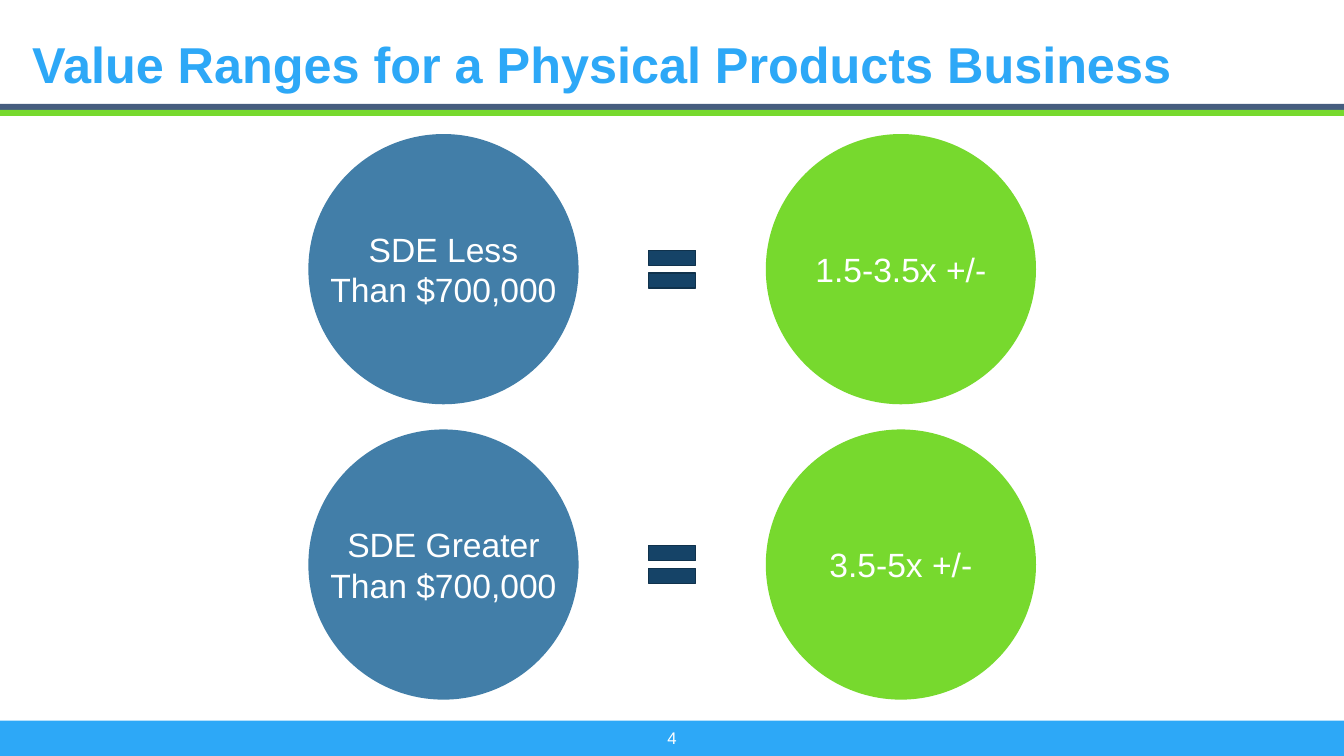
"""Build the slide on value ranges for a physical products business."""
import dataclasses
import typing

import pptx
import pptx.dml.color
import pptx.enum.shapes
import pptx.enum.text
import pptx.shapes.autoshape
import pptx.slide
import pptx.util

Pt = pptx.util.Pt
Kind = pptx.enum.shapes.MSO_SHAPE
Align = pptx.enum.text.PP_ALIGN
Anchor = pptx.enum.text.MSO_ANCHOR


@dataclasses.dataclass(frozen=True)
class Theme:
    font: str = "Arial"
    white: str = "FFFFFF"
    sky: str = "2DA8F7"
    slate: str = "465D7F"
    green: str = "77D92E"
    steel: str = "427EA8"
    navy: str = "154367"
    edge: str = "10324C"
    title: float = 36
    label: float = 24
    number: float = 12


@dataclasses.dataclass(frozen=True)
class Box:
    left: float
    top: float
    width: float
    height: float


@dataclasses.dataclass(frozen=True)
class Band:
    top: float
    height: float
    fill: str


@dataclasses.dataclass(frozen=True)
class Range:
    earnings: tuple[str, ...]
    value: tuple[str, ...]


THEME = Theme()
WIDTH, HEIGHT = 960, 540
DISC, SIGN = 193, 46
LEFT, RIGHT = 220.25, 547
TOP, STEP = 95.75, 211
BANDS = (
    Band(514.8, 25.2, THEME.sky),
    Band(74.2, 4.3, THEME.slate),
    Band(78.5, 4.3, THEME.green),
)
RANGES = (
    Range(("SDE Less", "Than $700,000"), ("1.5-3.5x +/-",)),
    Range(("SDE Greater", "Than $700,000"), ("3.5-5x +/-",)),
)


def tint(code: str) -> pptx.dml.color.RGBColor:
    return pptx.dml.color.RGBColor.from_string(code)


def place(shape: typing.Any, box: Box) -> None:
    shape.left, shape.top = Pt(box.left), Pt(box.top)
    shape.width, shape.height = Pt(box.width), Pt(box.height)


def write(shape: typing.Any, lines: tuple[str, ...], size: float, color: str,
          align: Align = Align.CENTER, anchor: Anchor = Anchor.MIDDLE,
          bold: bool = False, wrap: bool = False) -> None:
    frame = shape.text_frame
    frame.margin_left = frame.margin_right = Pt(0)
    frame.margin_top = frame.margin_bottom = Pt(0)
    frame.auto_size = pptx.enum.text.MSO_AUTO_SIZE.NONE
    frame.word_wrap = wrap
    frame.vertical_anchor = anchor
    para = frame.paragraphs[0]
    para.alignment = align
    for index, line in enumerate(lines):
        if index:
            para.add_line_break()
        run = para.add_run()
        run.text = line
        run.font.name = THEME.font
        run.font.size = Pt(size)
        run.font.bold = bold
        run.font.color.rgb = tint(color)


def draw(slide: pptx.slide.Slide, kind: Kind, box: Box, fill: str,
         edge: str | None = None) -> pptx.shapes.autoshape.Shape:
    shape = slide.shapes.add_shape(kind, Pt(0), Pt(0), Pt(1), Pt(1))
    place(shape, box)
    shape.shadow.inherit = False
    shape.fill.solid()
    shape.fill.fore_color.rgb = tint(fill)
    if edge:
        shape.line.color.rgb = tint(edge)
        shape.line.width = Pt(1)
    else:
        shape.line.fill.background()
    return shape


def draw_range(slide: pptx.slide.Slide, item: Range, top: float) -> None:
    discs = ((LEFT, THEME.steel, item.earnings), (RIGHT, THEME.green, item.value))
    for left, fill, lines in discs:
        disc = draw(slide, Kind.OVAL, Box(left, top, DISC, DISC), fill)
        write(disc, lines, THEME.label, THEME.white)
    sign = Box((WIDTH - SIGN) / 2, top + (DISC - SIGN) / 2, SIGN, SIGN)
    draw(slide, Kind.MATH_EQUAL, sign, THEME.navy, THEME.edge)


def main() -> None:
    deck = pptx.Presentation()
    deck.slide_width, deck.slide_height = Pt(WIDTH), Pt(HEIGHT)
    slide = deck.slides.add_slide(deck.slide_layouts[5])
    for band in BANDS:
        draw(slide, Kind.RECTANGLE, Box(0, band.top, WIDTH, band.height), band.fill)
    title = slide.shapes.title
    place(title, Box(23, 23, 914, 44))
    write(title, ("Value Ranges for a Physical Products Business",), THEME.title,
          THEME.sky, Align.LEFT, Anchor.BOTTOM, bold=True, wrap=True)
    number = slide.shapes.add_textbox(Pt(476.6), Pt(520), Pt(6.8), Pt(14.5))
    write(number, ("4",), THEME.number, THEME.white)
    for row, item in enumerate(RANGES):
        draw_range(slide, item, TOP + row * STEP)
    deck.save("out.pptx")


if __name__ == "__main__":
    main()
